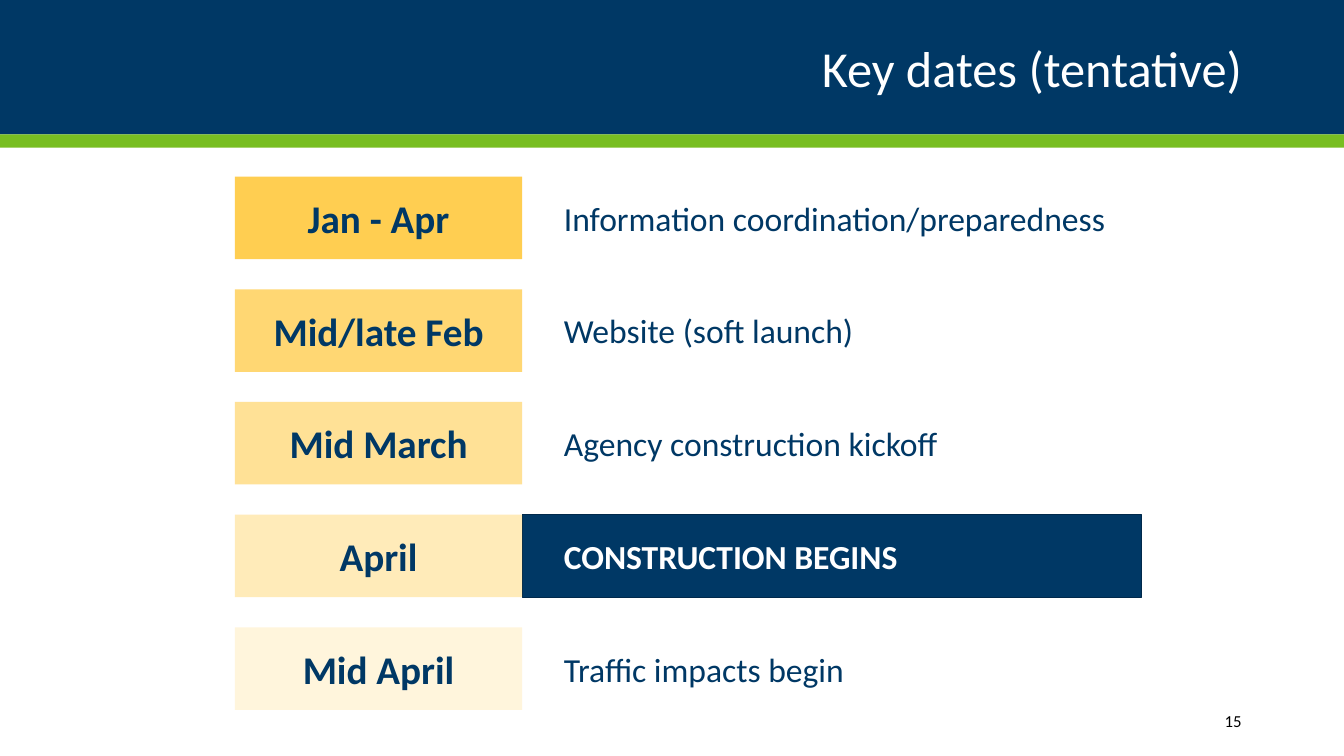
from lxml import etree
from pptx import Presentation
from pptx.dml.color import RGBColor
from pptx.enum import shapes, text
from pptx.oxml.ns import qn
from pptx.util import Cm, Pt

NAVY = RGBColor(0x00, 0x38, 0x65)
EDGE = RGBColor(0x00, 0x29, 0x4B)
GREEN = RGBColor(0x78, 0xBE, 0x21)
GOLD = RGBColor(0xFF, 0xCE, 0x51)
WHITE = RGBColor(0xFF, 0xFF, 0xFF)
BLACK = RGBColor(0x00, 0x00, 0x00)
LEFT, MID, RIGHT = text.PP_ALIGN.LEFT, text.PP_ALIGN.CENTER, text.PP_ALIGN.RIGHT

ROWS = [
    ("Jan - Apr", "Information coordination/preparedness", False),
    ("Mid/late Feb", "Website (soft launch)", False),
    ("Mid March", "Agency construction kickoff", False),
    ("April", "CONSTRUCTION BEGINS", True),
    ("Mid April", "Traffic impacts begin", False),
]


def write(shape, words, size, color, align=LEFT, bold=False):
    frame = shape.text_frame
    frame.word_wrap = True
    frame.vertical_anchor = text.MSO_ANCHOR.MIDDLE
    para = frame.paragraphs[0]
    para.alignment = align
    run = para.add_run()
    run.text = words
    font = run.font
    font.name, font.size, font.bold = "Calibri", Pt(size), bold
    font.color.rgb = color


def label(slide, x, y, w, h, *style):
    box = slide.shapes.add_textbox(Cm(x), Cm(y), Cm(w), Cm(h))
    write(box, *style)


def block(slide, x, y, w, h, color, alpha=100):
    rect = slide.shapes.add_shape(
        shapes.MSO_SHAPE.RECTANGLE, Cm(x), Cm(y), Cm(w), Cm(h))
    rect.shadow.inherit = False
    rect.fill.solid()
    rect.fill.fore_color.rgb = color
    rect.line.fill.background()
    if alpha < 100:
        tint = rect.fill._xPr.find(".//" + qn("a:srgbClr"))
        etree.SubElement(tint, qn("a:alpha")).set("val", str(alpha * 1000))
    return rect


def header(slide, x, y, w, h):
    block(slide, x, y, w, h, NAVY)
    block(slide, x, y + h, w, 0.33, GREEN)
    label(slide, x + 2.34, y + 0.43, 29.21, 2.54,
          "Key dates (tentative)", 36, WHITE, RIGHT)


def dates(slide, x, y, w, h):
    tall, wide = 2.08, 7.24
    step = (h - tall) / (len(ROWS) - 1)
    for i, (date, event, key) in enumerate(ROWS):
        top = y + i * step
        if key:
            bar = block(slide, x + wide, top, w - wide, tall, NAVY)
            bar.line.color.rgb = EDGE
            bar.line.width = Pt(0.85)
        cell = block(slide, x, top, wide, tall, GOLD, 100 - 20 * i)
        write(cell, date, 28, NAVY, MID, True)
        label(slide, x + 8.04, top + 0.4, 14.43, 1.28,
              event, 24, WHITE if key else NAVY, LEFT, key)


def main():
    deck = Presentation()
    deck.slide_width, deck.slide_height = Cm(33.87), Cm(19.05)
    slide = deck.slides.add_slide(deck.slide_layouts[6])
    header(slide, 0, 0, 33.87, 3.39)
    dates(slide, 5.92, 4.45, 22.84, 13.44)
    label(slide, 27.48, 17.65, 4.06, 1.02, "15", 12, BLACK, RIGHT)
    deck.save("out.pptx")


if __name__ == "__main__":
    main()
